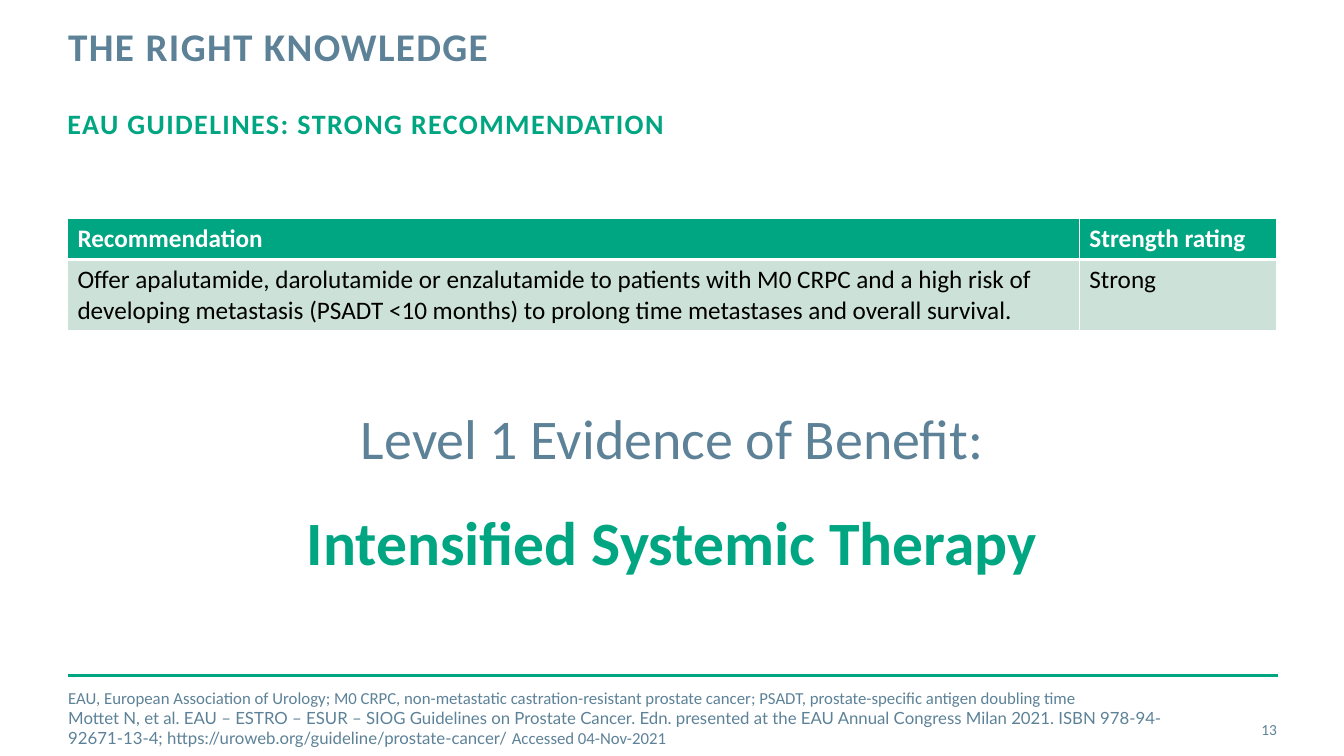
from lxml import etree
from pptx import Presentation
from pptx.dml.color import RGBColor
from pptx.enum.shapes import MSO_CONNECTOR
from pptx.enum.text import MSO_ANCHOR, PP_ALIGN
from pptx.oxml.ns import qn
from pptx.util import Cm, Pt

LEFT, CENTER, RIGHT = PP_ALIGN.LEFT, PP_ALIGN.CENTER, PP_ALIGN.RIGHT
TOP, MIDDLE = MSO_ANCHOR.TOP, MSO_ANCHOR.MIDDLE
STRAIGHT = MSO_CONNECTOR.STRAIGHT
COLOURS = {"green": "00A582", "slate": "5D8298", "mint": "CCE1D8",
           "white": "FFFFFF", "black": "000000"}
MARGIN, CONTENT_WIDTH = 1.72, 30.48


def colour(name):
    return RGBColor.from_string(COLOURS[name])


def add_span(paragraph, text, size, colour_name, bold=False, font="Calibri", tracking=0):
    """Add a run; tracking is the letter spacing in points."""
    span = paragraph.add_run()
    span.text = text
    font_format = {"name": font, "size": Pt(size), "bold": bold}
    for attribute, value in font_format.items():
        setattr(span.font, attribute, value)
    span.font.color.rgb = colour(colour_name)
    if tracking:
        span.font._element.set("spc", str(tracking * 100))


deck = Presentation()
deck.slide_width, deck.slide_height = Cm(33.87), Cm(19.05)
page = deck.slides.add_slide(deck.slide_layouts[6])

# Footer rule
rule = page.shapes.add_connector(
    STRAIGHT, Cm(MARGIN), Cm(17.02), Cm(MARGIN + CONTENT_WIDTH), Cm(17.02))
rule.line.color.rgb = colour("green")
rule.line.width = Pt(2)
etree.SubElement(rule._element.spPr, qn("a:effectLst"))

# Text boxes: place, inset, anchor, alignment, paragraphs of spans
heading = {"bold": True, "tracking": 1}
text_boxes = [
    ((MARGIN, 0.69, 24.28, 2.24), 0, TOP, LEFT,
     [[("THE RIGHT KNOWLEDGE", 28, "slate", heading)]]),
    ((1.7, 2.69, CONTENT_WIDTH, 1.96), 0, TOP, LEFT,
     [[("EAU GUIDELINES: STRONG RECOMMENDATION", 20, "green", heading)]]),
    ((1.7, 9.91, CONTENT_WIDTH, 4.9), 0.25, MIDDLE, CENTER,
     [[("Level 1 Evidence of Benefit:", 40, "slate", {})],
      [("Intensified Systemic Therapy", 44, "green", {"bold": True})]]),
    ((MARGIN, 17.58, 28.88, 1.02), 0, MIDDLE, LEFT,
     [[("EAU, European Association of Urology; M0 CRPC, non-metastatic castration-resistant "
        "prostate cancer; PSADT, prostate-specific antigen doubling time", 12, "slate", {})],
      [("Mottet N, et al. EAU – ESTRO – ESUR – SIOG Guidelines on Prostate Cancer. Edn. "
        "presented at the EAU Annual Congress Milan 2021. ISBN 978-94-92671-13-4; "
        "https://uroweb.org/guideline/prostate-cancer/ ", 12, "slate", {"font": "Lato"}),
       ("Accessed 04-Nov-2021", 12, "slate", {})]]),
    ((30, 17.86, 2.18, 1.02), 0, MIDDLE, RIGHT, [[("13", 11, "slate", {})]]),
]
boxes = []
for place, inset, anchor, alignment, paragraphs in text_boxes:
    box = page.shapes.add_textbox(*map(Cm, place))
    frame = box.text_frame
    frame_format = {"word_wrap": True, "vertical_anchor": anchor,
                    "margin_left": Cm(inset), "margin_right": Cm(inset),
                    "margin_top": Cm(inset / 2), "margin_bottom": Cm(inset / 2)}
    for attribute, value in frame_format.items():
        setattr(frame, attribute, value)
    for index, spans in enumerate(paragraphs):
        paragraph = frame.add_paragraph() if index else frame.paragraphs[0]
        paragraph.alignment = alignment
        for text, size, colour_name, options in spans:
            add_span(paragraph, text, size, colour_name, **options)
    boxes.append(box)

title, subtitle, message, references, page_number = boxes
title.text_frame.paragraphs[0].line_spacing = Pt(30)
message.text_frame.paragraphs[1].space_before = Pt(24)

# Recommendation table
rows = [
    ["Recommendation", "Strength rating"],
    ["Offer apalutamide, darolutamide or enzalutamide to patients with M0 CRPC and a high risk "
     "of developing metastasis (PSADT <10 months) to prolong time metastases and overall "
     "survival.", "Strong"],
]
row_styles = [
    {"fill": "green", "text": "white", "bold": True, "top": 1, "bottom": 3},
    {"fill": "mint", "text": "black", "bold": False, "top": 3, "bottom": 1},
]
column_widths, row_heights = [25.5, 4.98], [1.03, 1.79]
table = page.shapes.add_table(
    2, 2, Cm(1.7), Cm(5.51), Cm(sum(column_widths)), Cm(sum(row_heights))).table
for column, width in zip(table.columns, column_widths):
    column.width = Cm(width)
for row, height, texts, style in zip(table.rows, row_heights, rows, row_styles):
    row.height = Cm(height)
    for cell, text in zip(row.cells, texts):
        add_span(cell.text_frame.paragraphs[0], text, 18, style["text"], style["bold"])
        borders = {"a:lnL": 1, "a:lnR": 1, "a:lnT": style["top"], "a:lnB": style["bottom"]}
        for tag, points in borders.items():
            border = etree.SubElement(cell._tc.get_or_add_tcPr(), qn(tag), w=str(Pt(points)))
            fill = etree.SubElement(border, qn("a:solidFill"))
            etree.SubElement(fill, qn("a:srgbClr"), val=COLOURS["white"])
        cell.fill.solid()
        cell.fill.fore_color.rgb = colour(style["fill"])

deck.save("out.pptx")
